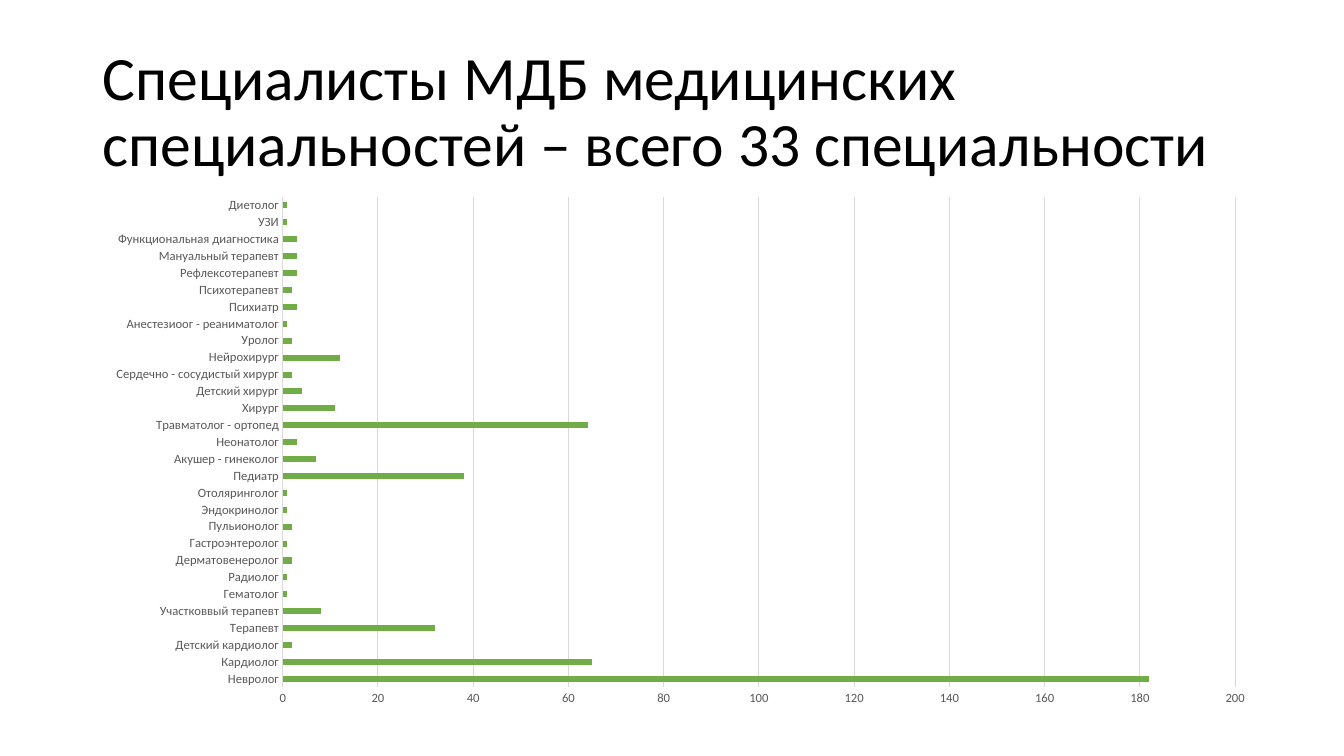
from typing import NamedTuple

from pptx import Presentation
from pptx import util as u
from pptx.chart.axis import _BaseAxis
from pptx.chart.data import CategoryChartData
from pptx.dml.color import RGBColor
from pptx.enum import chart as ch
from pptx.enum import text

BLACK = RGBColor(0x00, 0x00, 0x00)
GREY_TEXT = RGBColor(0x59, 0x59, 0x59)
GRID = RGBColor(0xD9, 0xD9, 0xD9)
GREEN = RGBColor(0x70, 0xAD, 0x47)
FONT = "Calibri"


class Specialty(NamedTuple):
    name: str
    doctors: int


SPECIALTIES = [
    Specialty("Невролог", 182),
    Specialty("Кардиолог", 65),
    Specialty("Детский кардиолог", 2),
    Specialty("Терапевт", 32),
    Specialty("Участковвый терапевт", 8),
    Specialty("Гематолог", 1),
    Specialty("Радиолог", 1),
    Specialty("Дерматовенеролог", 2),
    Specialty("Гастроэнтеролог", 1),
    Specialty("Пульионолог", 2),
    Specialty("Эндокринолог", 1),
    Specialty("Отоляринголог", 1),
    Specialty("Педиатр", 38),
    Specialty("Акушер - гинеколог", 7),
    Specialty("Неонатолог", 3),
    Specialty("Травматолог - ортопед", 64),
    Specialty("Хирург", 11),
    Specialty("Детский хирург", 4),
    Specialty("Сердечно - сосудистый хирург", 2),
    Specialty("Нейрохирург", 12),
    Specialty("Уролог", 2),
    Specialty("Анестезиоог - реаниматолог", 1),
    Specialty("Психиатр", 3),
    Specialty("Психотерапевт", 2),
    Specialty("Рефлексотерапевт", 3),
    Specialty("Мануальный терапевт", 3),
    Specialty("Функциональная диагностика", 3),
    Specialty("УЗИ", 1),
    Specialty("Диетолог", 1),
]


def add_heading(slide, wording: str) -> None:
    box = slide.shapes.add_textbox(
        u.Inches(0.92), u.Inches(0.4), u.Inches(11.5), u.Inches(1.45))
    frame = box.text_frame
    frame.word_wrap = True
    frame.vertical_anchor = text.MSO_ANCHOR.MIDDLE
    heading = frame.paragraphs[0]
    heading.text = wording
    heading.line_spacing = 0.9
    heading.font.name = FONT
    heading.font.size = u.Pt(44)
    heading.font.color.rgb = BLACK


def style_axis(axis: _BaseAxis) -> None:
    axis.major_tick_mark = axis.minor_tick_mark = ch.XL_TICK_MARK.NONE
    labels = axis.tick_labels.font
    labels.name = FONT
    labels.size = u.Pt(9)
    labels.color.rgb = GREY_TEXT


def add_specialty_chart(slide, specialties: list[Specialty]) -> None:
    staff = CategoryChartData()
    staff.categories = [s.name for s in specialties]
    staff.add_series("Series 1", [s.doctors for s in specialties])
    chart = slide.shapes.add_chart(
        ch.XL_CHART_TYPE.BAR_CLUSTERED,
        u.Inches(0.92), u.Inches(1.85), u.Inches(11.66), u.Inches(5.26), staff).chart
    chart.has_legend = False
    chart.has_title = False
    chart.font.name = FONT
    chart.font.size = u.Pt(10)
    chart.font.color.rgb = BLACK

    bars = chart.plots[0]
    bars.gap_width = 182
    bars.vary_by_categories = False
    bars.series[0].format.fill.solid()
    bars.series[0].format.fill.fore_color.rgb = GREEN

    names, counts = chart.category_axis, chart.value_axis
    style_axis(names)
    style_axis(counts)
    counts.minimum_scale, counts.maximum_scale, counts.major_unit = 0, 200, 20
    counts.has_major_gridlines = True
    counts.format.line.fill.background()
    for line in (names.format.line, counts.major_gridlines.format.line):
        line.color.rgb = GRID
        line.width = u.Pt(0.75)


def main() -> None:
    deck = Presentation()
    deck.slide_width = u.Inches(13.33)
    deck.slide_height = u.Inches(7.5)
    slide = deck.slides.add_slide(deck.slide_layouts[6])
    add_heading(
        slide, "Специалисты МДБ медицинских специальностей – всего 33 специальности")
    add_specialty_chart(slide, SPECIALTIES)
    deck.save("out.pptx")


if __name__ == "__main__":
    main()
